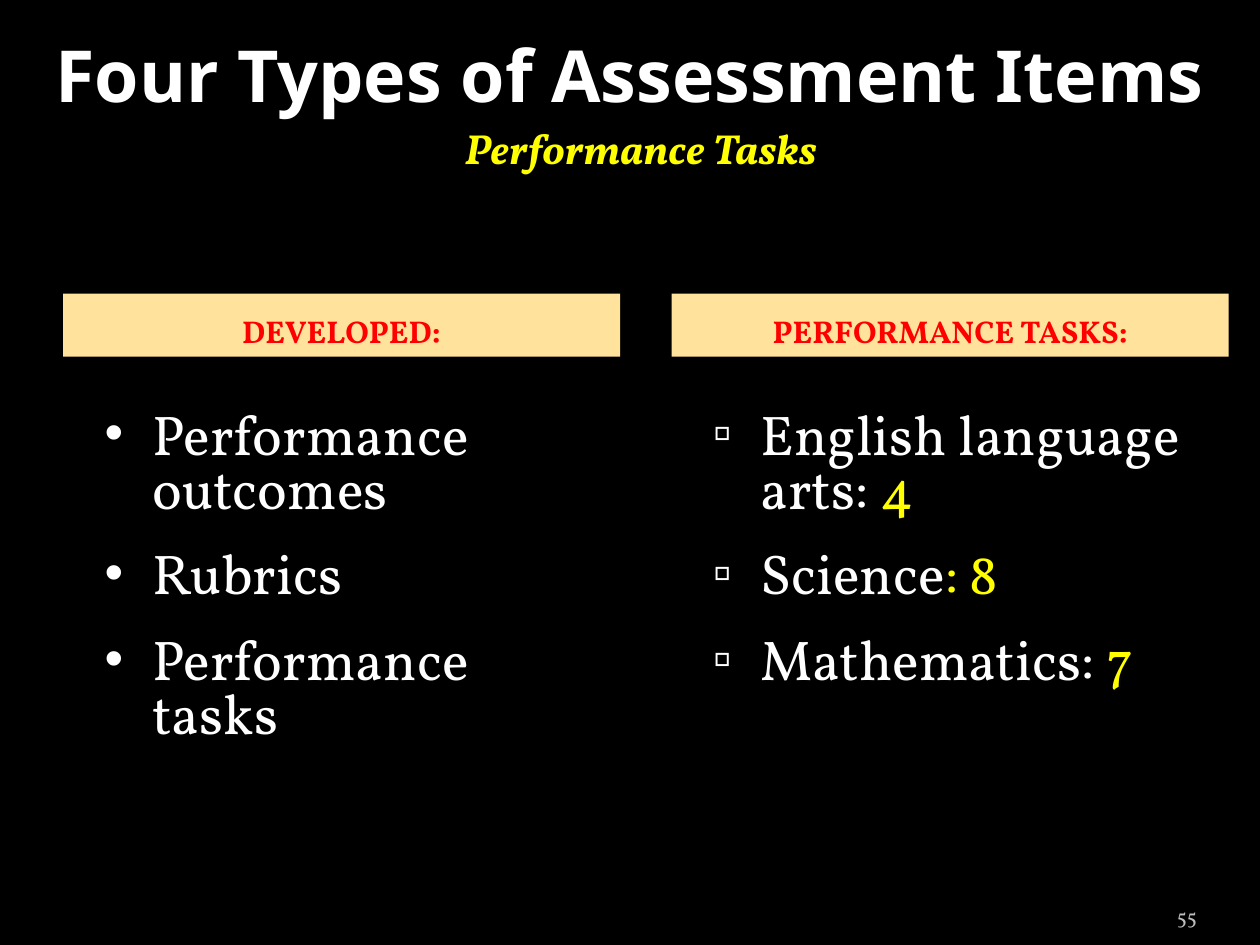
from dataclasses import dataclass

from lxml import etree
from pptx import Presentation
from pptx.dml.color import RGBColor
from pptx.enum.text import MSO_ANCHOR, MSO_AUTO_SIZE, PP_ALIGN
from pptx.oxml.ns import qn
from pptx.util import Cm, Pt

LEFT, CENTER, RIGHT = PP_ALIGN.LEFT, PP_ALIGN.CENTER, PP_ALIGN.RIGHT
TOP, MIDDLE, BOTTOM = MSO_ANCHOR.TOP, MSO_ANCHOR.MIDDLE, MSO_ANCHOR.BOTTOM
COMPARISON_LAYOUT = 4


@dataclass(frozen=True)
class Theme:
    background: str = "000000"
    text: str = "FFFFFF"
    accent: str = "FFFF00"
    header_fill: str = "FFE39D"
    header_text: str = "FF0000"
    muted: str = "BDBDBD"
    title_font: str = "Noto Sans"
    body_font: str = "Vollkorn"
    title_size: int = 41
    list_size: int = 32
    subtitle_size: int = 24
    header_size: int = 18
    number_size: int = 12


@dataclass(frozen=True)
class Item:
    label: str
    count: str = ""


@dataclass(frozen=True)
class Column:
    header: str
    bullet: str
    list_left: float
    items: tuple[Item, ...]


THEME = Theme()
COLUMNS = (
    Column("DEVELOPED:", "•", 0.84,
           (Item("Performance outcomes"), Item("Rubrics"), Item("Performance tasks"))),
    Column("PERFORMANCE TASKS:", "▫", 13.1,
           (Item("English language arts: ", "4"), Item("Science", ": 8"),
            Item("Mathematics: ", "7"))),
)
# Column grid, in centimetres
HEADER_LEFT, COLUMN_STEP, COLUMN_WIDTH = 1.27, 12.27, 11.23
LIST_INDENT, LIST_HANGING = 1.98, -0.96
SUBTITLE_INDENT, SUBTITLE_HANGING = 1.52, -1.14


def set_attributes(target, values: dict) -> None:
    for name, value in values.items():
        setattr(target, name, value)


def place(shape, left: float, top: float, width: float, height: float,
          anchor=TOP, insets=(0.25, 0.13, 0.25, 0.13)) -> None:
    set_attributes(shape, {"left": Cm(left), "top": Cm(top),
                           "width": Cm(width), "height": Cm(height)})
    margins = ("margin_left", "margin_top", "margin_right", "margin_bottom")
    frame = {"word_wrap": True, "auto_size": MSO_AUTO_SIZE.NONE, "vertical_anchor": anchor}
    frame.update(zip(margins, map(Cm, insets)))
    set_attributes(shape.text_frame, frame)


def add_run(paragraph, text: str, size: int, color: str,
            name: str = THEME.body_font, bold=False, italic=False) -> None:
    run = paragraph.add_run()
    run.text = text
    set_attributes(run.font, {"name": name, "size": Pt(size), "bold": bold, "italic": italic})
    run.font.color.rgb = RGBColor.from_string(color)


def set_indent(paragraph, left: float, hanging: float) -> None:
    properties = paragraph._p.get_or_add_pPr()
    properties.set("marL", str(Cm(left)))
    properties.set("indent", str(Cm(hanging)))


def add_bullet(paragraph, character: str) -> None:
    properties = paragraph._p.get_or_add_pPr()
    color = etree.SubElement(properties, qn("a:buClr"))
    etree.SubElement(color, qn("a:srgbClr"), val=THEME.text)
    etree.SubElement(properties, qn("a:buSzPct"), val="95000")
    etree.SubElement(properties, qn("a:buChar"), char=character)


def fill_header(shape, text: str, left: float) -> None:
    place(shape, left, 5.92, COLUMN_WIDTH, 1.27, BOTTOM, (0.25, 0.76, 0.25, 0.13))
    shape.fill.solid()
    shape.fill.fore_color.rgb = RGBColor.from_string(THEME.header_fill)
    paragraph = shape.text_frame.paragraphs[0]
    paragraph.alignment = CENTER
    add_run(paragraph, text, THEME.header_size, THEME.header_text, bold=True)


def fill_list(shape, column: Column) -> None:
    place(shape, column.list_left, 8.18, COLUMN_WIDTH, 10.03)
    frame = shape.text_frame
    for index, item in enumerate(column.items):
        paragraph = frame.add_paragraph() if index else frame.paragraphs[0]
        set_attributes(paragraph, {"level": 1, "alignment": LEFT, "line_spacing": 0.8,
                                   "space_after": Pt(12)})
        set_indent(paragraph, LIST_INDENT, LIST_HANGING)
        add_bullet(paragraph, column.bullet)
        add_run(paragraph, item.label, THEME.list_size, THEME.text)
        if item.count:
            add_run(paragraph, item.count, THEME.list_size, THEME.accent)


def add_text_box(slide, alignment):
    shape = slide.shapes.add_textbox(0, 0, 0, 0)
    paragraph = shape.text_frame.paragraphs[0]
    paragraph.alignment = alignment
    return shape, paragraph


def main() -> None:
    presentation = Presentation()
    presentation.slide_width, presentation.slide_height = Cm(25.4), Cm(19.05)
    slide = presentation.slides.add_slide(presentation.slide_layouts[COMPARISON_LAYOUT])
    slide.background.fill.solid()
    slide.background.fill.fore_color.rgb = RGBColor.from_string(THEME.background)

    # Title
    title = slide.shapes.title
    place(title, 0, 0.43, 25.4, 2.11, MIDDLE)
    paragraph = title.text_frame.paragraphs[0]
    paragraph.alignment = CENTER
    add_run(paragraph, "Four Types of Assessment Items", THEME.title_size, THEME.text,
            THEME.title_font, bold=True)

    # Subtitle
    subtitle, paragraph = add_text_box(slide, CENTER)
    place(subtitle, 0, 2.34, 25.45, 1.9)
    paragraph.space_before = Pt(4.8)
    set_indent(paragraph, SUBTITLE_INDENT, SUBTITLE_HANGING)
    add_run(paragraph, "Performance Tasks", THEME.subtitle_size, THEME.accent,
            bold=True, italic=True)

    # Columns: placeholders 1 and 3 are headers, 2 and 4 are lists
    placeholders = {shape.placeholder_format.idx: shape for shape in slide.placeholders}
    for index, column in enumerate(COLUMNS):
        fill_header(placeholders[2 * index + 1], column.header,
                    HEADER_LEFT + index * COLUMN_STEP)
        fill_list(placeholders[2 * index + 2], column)

    # Slide number
    number, paragraph = add_text_box(slide, RIGHT)
    place(number, 22.02, 17.83, 2.11, 1.02, BOTTOM, (0, 0.13, 0, 0.13))
    add_run(paragraph, "55", THEME.number_size, THEME.muted)

    presentation.save("out.pptx")


if __name__ == "__main__":
    main()
